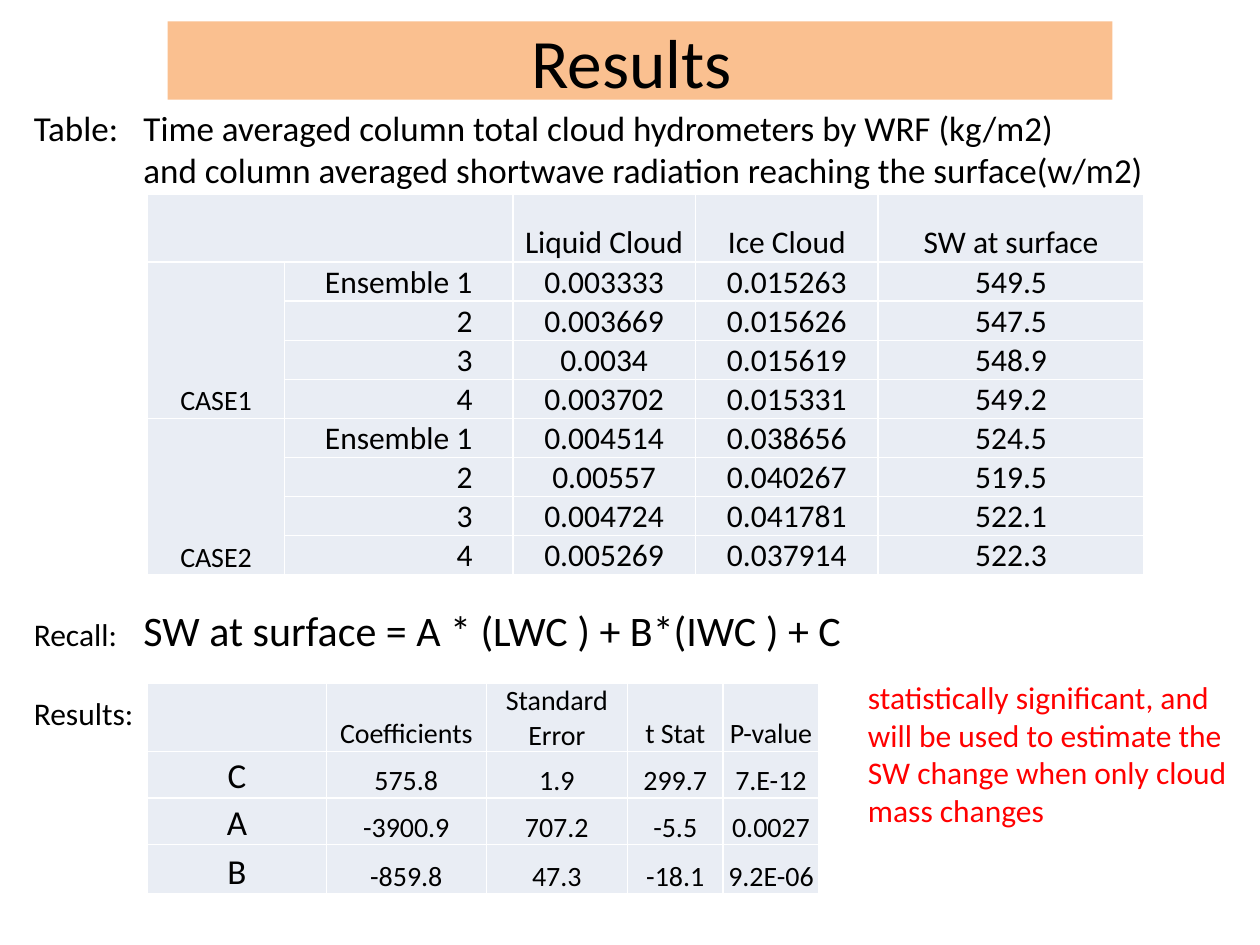
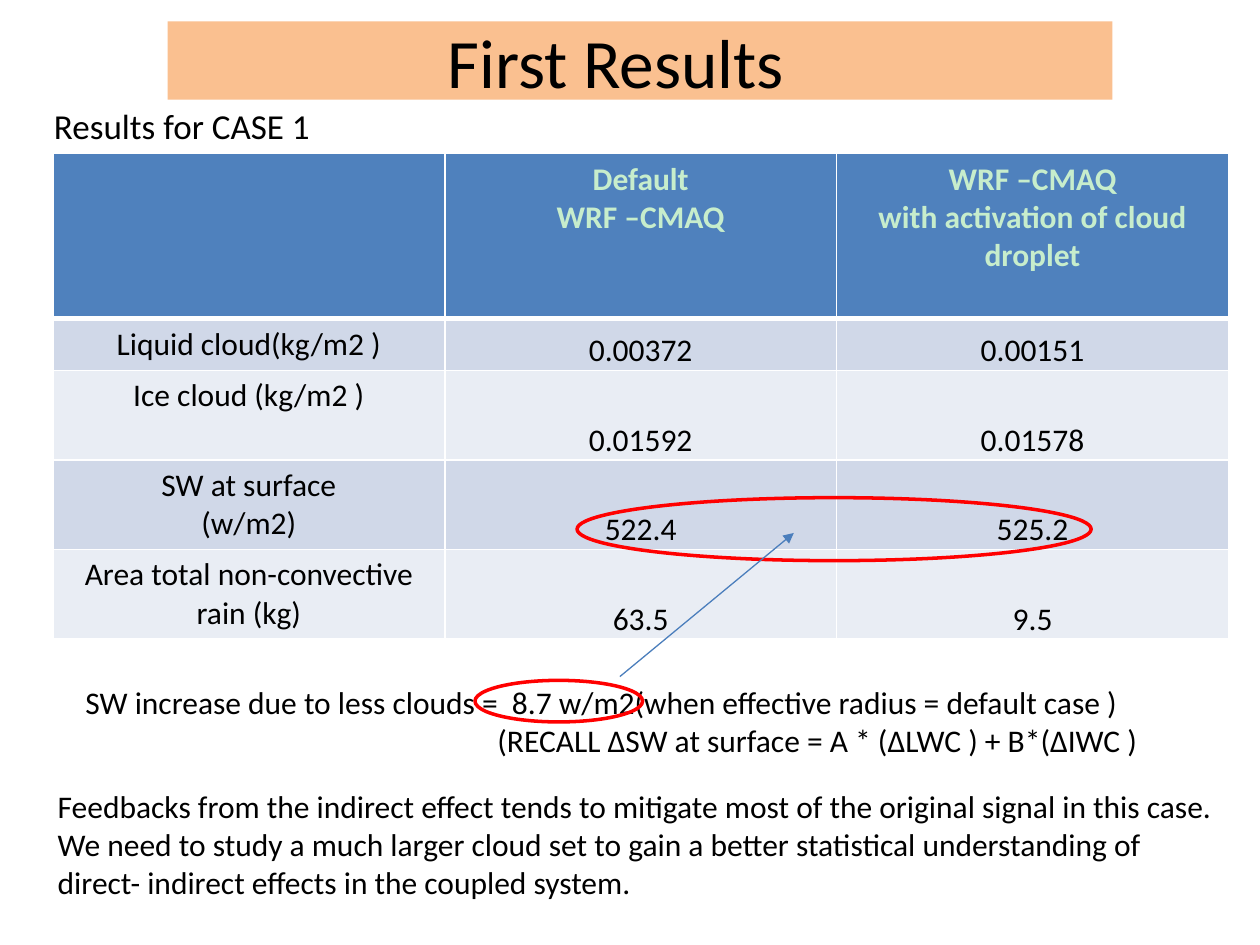
import dataclasses

import lxml.etree
import pptx
import pptx.dml.color
import pptx.enum.shapes
import pptx.enum.text
import pptx.oxml.ns
import pptx.util

Inches = pptx.util.Inches
Pt = pptx.util.Pt
qn = pptx.oxml.ns.qn
ALIGN = pptx.enum.text.PP_ALIGN
ANCHOR = pptx.enum.text.MSO_ANCHOR

FONT = "Calibri"
COLORS = {
    "paper": "FFFFFF",
    "ink": "000000",
    "title_band": "FAC090",
    "cell": "E9EDF4",
    "cell_alt": "D0D8E8",
    "header": "4F81BD",
    "header_text": "C7EDCC",
    "highlight": "FF0000",
    "arrow": "4B7EBC",
}
TITLE_BOX = (1.33, 0.17, 7.5, 0.62)
LABEL_TAB = 0.87
TIGHT = (0.01, 0.01, 0.01, 0)
ROOMY = (0.1, 0.05, 0.1, 0.05)

ENSEMBLES = {
    "CASE1": [
        ("Ensemble 1", "0.003333", "0.015263", "549.5"),
        ("2", "0.003669", "0.015626", "547.5"),
        ("3", "0.0034", "0.015619", "548.9"),
        ("4", "0.003702", "0.015331", "549.2"),
    ],
    "CASE2": [
        ("Ensemble 1", "0.004514", "0.038656", "524.5"),
        ("2", "0.00557", "0.040267", "519.5"),
        ("3", "0.004724", "0.041781", "522.1"),
        ("4", "0.005269", "0.037914", "522.3"),
    ],
}
REGRESSION = [
    ("", "Coefficients", "Standard Error", "t Stat", "P-value"),
    ("C", "575.8", "1.9", "299.7", "7.E-12"),
    ("A", "-3900.9", "707.2", "-5.5", "0.0027"),
    ("B", "-859.8", "47.3", "-18.1", "9.2E-06"),
]
COMPARISON = [
    ("", "Default\nWRF –CMAQ", "WRF –CMAQ\nwith activation of cloud droplet"),
    ("Liquid cloud(kg/m2 )", "0.00372", "0.00151"),
    ("Ice cloud (kg/m2 )", "0.01592", "0.01578"),
    ("SW at surface\n(w/m2)", "522.4", "525.2"),
    ("Area total non-convective rain (kg)", "63.5", "9.5"),
]


@dataclasses.dataclass
class Line:
    """One paragraph: (text, size) runs, with left indent and tab in inches."""
    runs: list
    indent: float = 0
    tab: float = 0
    before: float = 0


def color(name):
    return pptx.dml.color.RGBColor.from_string(COLORS[name])


def inches(box):
    return [Inches(length) for length in box]


def add_run(paragraph, text, size, ink="ink", bold=False):
    run = paragraph.add_run()
    run.text = text
    run.font.name = FONT
    run.font.size = Pt(size)
    run.font.bold = bold
    run.font.color.rgb = color(ink)


def add_text(slide, box, lines, ink="ink"):
    frame = slide.shapes.add_textbox(*inches(box)).text_frame
    frame.word_wrap = True
    for number, line in enumerate(lines):
        paragraph = frame.paragraphs[0] if number == 0 else frame.add_paragraph()
        if line.before:
            paragraph.space_before = Pt(line.before)
        properties = paragraph._p.get_or_add_pPr()
        if line.indent:
            properties.set("marL", str(Inches(line.indent)))
            properties.set("indent", "0")
        if line.tab:
            stops = lxml.etree.SubElement(properties, qn("a:tabLst"))
            lxml.etree.SubElement(stops, qn("a:tab"),
                                  pos=str(Inches(line.tab)), algn="l")
        for text, size in line.runs:
            add_run(paragraph, text, size, ink)


def add_title(slide, text, right_inset):
    band = slide.shapes.add_shape(
        pptx.enum.shapes.MSO_SHAPE.RECTANGLE, *inches(TITLE_BOX))
    band.shadow.inherit = False
    band.fill.solid()
    band.fill.fore_color.rgb = color("title_band")
    band.line.fill.background()
    frame = band.text_frame
    frame.word_wrap = True
    frame.vertical_anchor = ANCHOR.MIDDLE
    frame.margin_right = Inches(right_inset)
    paragraph = frame.paragraphs[0]
    paragraph.alignment = ALIGN.CENTER
    add_run(paragraph, text, 39.6)


def add_grid(slide, origin, widths, heights):
    """Add an unstyled table with the given column widths and row heights."""
    box = (*origin, sum(widths), sum(heights))
    table = slide.shapes.add_table(len(heights), len(widths), *inches(box)).table
    table.first_row = table.horz_banding = False
    for column, width in zip(table.columns, widths):
        column.width = Inches(width)
    for row, height in zip(table.rows, heights):
        row.height = Inches(height)
    return table


def set_borders(cell, bottom):
    properties = cell._tc.get_or_add_tcPr()
    for position, side in enumerate("LRTB"):
        line = lxml.etree.Element(qn(f"a:ln{side}"))
        line.set("w", str(Pt(bottom if side == "B" else 1)))
        fill = lxml.etree.SubElement(line, qn("a:solidFill"))
        lxml.etree.SubElement(fill, qn("a:srgbClr"), val=COLORS["paper"])
        properties.insert(position, line)


def fill_cell(cell, text, size, fill="cell", ink="ink", bold=False,
              align=ALIGN.CENTER, anchor=ANCHOR.BOTTOM, margins=TIGHT, bottom=1):
    cell.fill.solid()
    cell.fill.fore_color.rgb = color(fill)
    set_borders(cell, bottom)
    cell.vertical_anchor = anchor
    (cell.margin_left, cell.margin_top,
     cell.margin_right, cell.margin_bottom) = inches(margins)
    frame = cell.text_frame
    for number, part in enumerate(text.split("\n") if text else []):
        paragraph = frame.paragraphs[0] if number == 0 else frame.add_paragraph()
        paragraph.alignment = align
        add_run(paragraph, part, size, ink, bold)


def add_ensemble_table(slide, origin):
    rows = [("", "", "Liquid Cloud", "Ice Cloud", "SW at surface")]
    for case, members in ENSEMBLES.items():
        rows += [(case if number == 0 else "", *member)
                 for number, member in enumerate(members)]
    table = add_grid(slide, origin, [1.09, 1.81, 1.45, 1.45, 2.11],
                     [0.54] + [0.31] * (len(rows) - 1))
    for r, row in enumerate(rows):
        for c, text in enumerate(row):
            member = c == 1
            fill_cell(table.cell(r, c), text, 16 if c == 0 else 18,
                      align=ALIGN.RIGHT if member else ALIGN.CENTER,
                      margins=(0.01, 0.01, 0.32, 0) if member else TIGHT)
    table.cell(0, 0).merge(table.cell(0, 1))
    first = 1
    for members in ENSEMBLES.values():
        last = first + len(members) - 1
        table.cell(first, 0).merge(table.cell(last, 0))
        first = last + 1


def add_regression_table(slide, origin):
    table = add_grid(slide, origin, [1.42, 1.27, 1.12, 0.76, 0.76],
                     [0.54, 0.37, 0.37, 0.39])
    for r, row in enumerate(REGRESSION):
        for c, text in enumerate(row):
            fill_cell(table.cell(r, c), text, 20 if c == 0 else 16)


def add_comparison_table(slide, origin):
    table = add_grid(slide, origin, [3.11] * 3, [1.31, 0.41, 0.71, 0.71, 0.71])
    for r, row in enumerate(COMPARISON):
        for c, text in enumerate(row):
            cell = table.cell(r, c)
            if r == 0:
                fill_cell(cell, text, 18, "header", "header_text", bold=True,
                          anchor=ANCHOR.TOP, margins=ROOMY, bottom=3)
                continue
            fill = "cell_alt" if r % 2 else "cell"
            if c == 0:
                fill_cell(cell, text, 18, fill, anchor=ANCHOR.TOP, margins=ROOMY)
            else:
                fill_cell(cell, text, 18, fill)


def add_ring(slide, box):
    ring = slide.shapes.add_shape(pptx.enum.shapes.MSO_SHAPE.OVAL, *inches(box))
    ring.shadow.inherit = False
    ring.fill.background()
    ring.line.color.rgb = color("highlight")
    ring.line.width = Pt(2)


def add_arrow(slide, start, end):
    arrow = slide.shapes.add_connector(
        pptx.enum.shapes.MSO_CONNECTOR.STRAIGHT, *inches(start + end))
    arrow.line.color.rgb = color("arrow")
    arrow.line.width = Pt(0.75)
    properties = arrow.element.spPr
    lxml.etree.SubElement(properties.find(qn("a:ln")), qn("a:tailEnd"),
                          type="triangle")
    lxml.etree.SubElement(properties, qn("a:effectLst"))


def add_slide(deck, title, title_inset):
    slide = deck.slides.add_slide(deck.slide_layouts[6])
    slide.background.fill.solid()
    slide.background.fill.fore_color.rgb = color("paper")
    add_title(slide, title, title_inset)
    return slide


def build_results(deck):
    slide = add_slide(deck, "Results", 0.23)
    add_text(slide, (0.17, 0.8, 9.35, 0.77), [
        Line([("Table:\tTime averaged column total cloud hydrometers by WRF (kg/m2)",
               20)], tab=LABEL_TAB),
        Line([("and column averaged shortwave radiation reaching the surface(w/m2)",
               20)], indent=LABEL_TAB),
    ])
    add_ensemble_table(slide, (1.17, 1.54))
    add_text(slide, (0.17, 4.75, 7.42, 1.11), [
        Line([("Recall:\t", 18), ("SW at surface = A * (LWC ) + B*(IWC ) + C", 24)],
             tab=LABEL_TAB),
        Line([("Results:", 18)], before=22),
    ])
    add_regression_table(slide, (1.17, 5.42))
    add_text(slide, (6.79, 5.33, 3.21, 1.31), [
        Line([("statistically significant, and will be used to estimate the "
               "SW change when only cloud mass changes", 18)]),
    ], "highlight")


def build_first_results(deck):
    slide = add_slide(deck, "First Results", 0.48)
    add_comparison_table(slide, (0.42, 1.22))
    add_text(slide, (0.33, 0.78, 2.42, 0.44), [Line([("Results for CASE 1", 20)])])
    add_text(slide, (0.58, 5.37, 9.4, 1.01), [
        Line([("SW increase due to less clouds =  8.7 w/m2"
               "(when effective radius = default case )", 18)]),
        Line([("(RECALL ∆SW at surface = A * (∆LWC ) + B*(∆IWC )", 18)],
             indent=3.27),
    ])
    add_ring(slide, (4.58, 3.95, 4.08, 0.5))
    add_ring(slide, (3.77, 5.4, 1.33, 0.33))
    add_arrow(slide, (4.92, 5.37), (6.3, 4.23))
    add_text(slide, (0.36, 6.2, 9.42, 1.01), [
        Line([("Feedbacks from the indirect effect tends to mitigate most of the "
               "original signal in this case.", 18)]),
        Line([("We need to study a much larger cloud set to gain a better "
               "statistical understanding of direct- indirect effects in the "
               "coupled system.", 18)]),
    ])


def main():
    deck = pptx.Presentation()
    deck.slide_width, deck.slide_height = inches((10, 7.5))
    build_results(deck)
    build_first_results(deck)
    deck.save("out.pptx")


if __name__ == "__main__":
    main()
